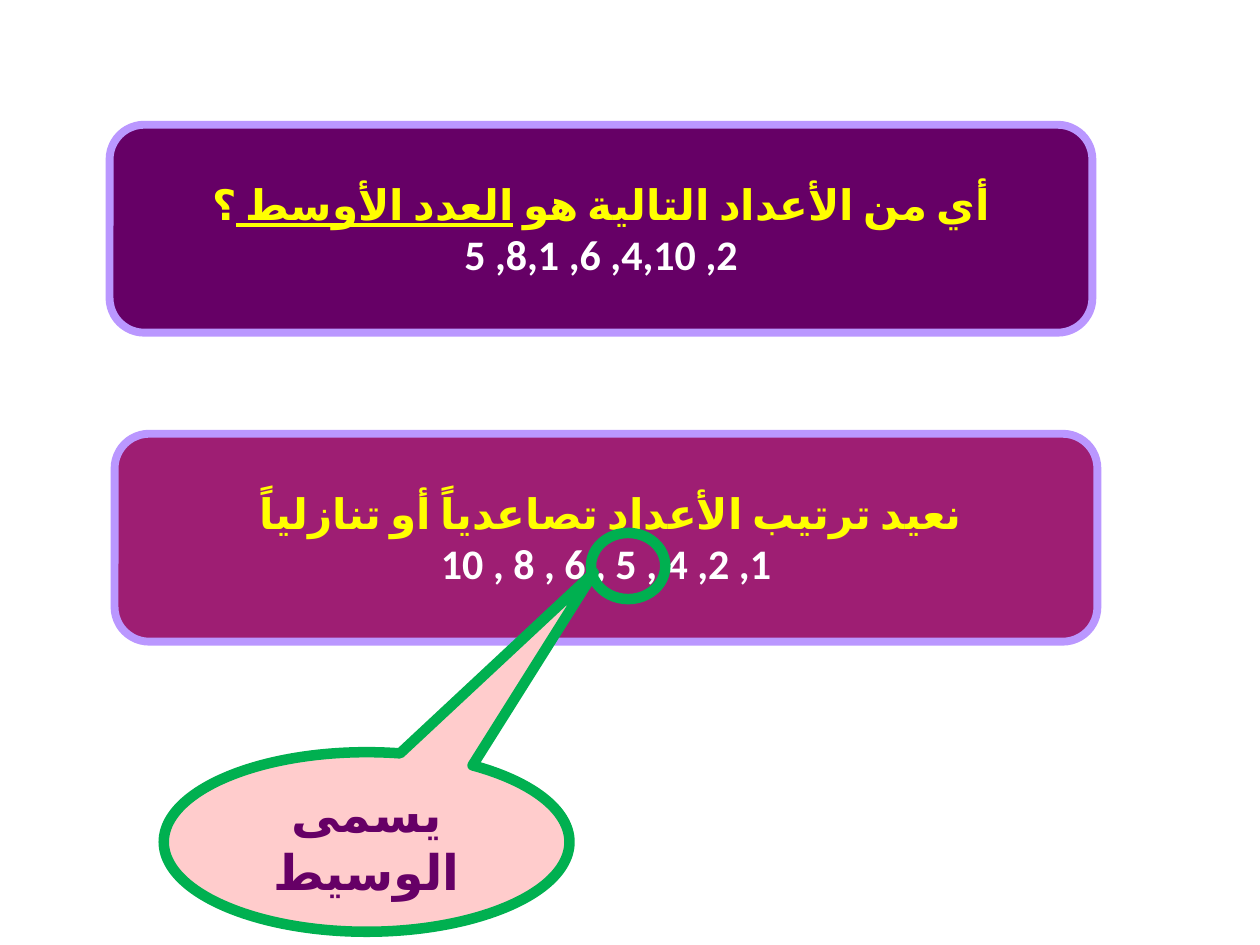
import lxml.etree
import pptx
import pptx.util
import pptx.dml.color
import pptx.enum.lang
import pptx.enum.shapes
import pptx.enum.text
import pptx.oxml.ns

WIDE = pptx.util.Inches(10)
HIGH = pptx.util.Inches(7.5)
KIND = pptx.enum.shapes.MSO_SHAPE
FACE = "Calibri"
HUE = {
    "plum": "660066",
    "berry": "9E1E73",
    "lilac": "BA97FF",
    "green": "00B050",
    "pink": "FFCCCC",
    "yellow": "FFFF00",
    "white": "FFFFFF",
}


def tint(name):
    return pptx.dml.color.RGBColor.from_string(HUE[name])


def draw(slide, kind, box, line, width, fill=None):
    left, top, wide, high = box
    shape = slide.shapes.add_shape(
        kind,
        round(left * WIDE),
        round(top * HIGH),
        round(wide * WIDE),
        round(high * HIGH),
    )
    shape.shadow.inherit = False
    shape.line.color.rgb = tint(line)
    shape.line.width = pptx.util.Pt(width)
    if fill:
        shape.fill.solid()
        shape.fill.fore_color.rgb = tint(fill)
    else:
        shape.fill.background()
    return shape


def script(run):
    run.font.language_id = pptx.enum.lang.MSO_LANGUAGE_ID.ARABIC
    tag = pptx.oxml.ns.qn("a:cs")
    lxml.etree.SubElement(run._r.get_or_add_rPr(), tag).set("typeface", FACE)


def write(para, parts, size, hue):
    para.alignment = pptx.enum.text.PP_ALIGN.CENTER
    para._p.get_or_add_pPr().set("rtl", "1")
    font = para.font
    font.name = FACE
    font.size = pptx.util.Pt(size)
    font.bold = True
    font.color.rgb = tint(hue)
    for text, under in parts:
        run = para.add_run()
        run.text = text
        if under:
            run.font.underline = True
        if any(sign.isalpha() for sign in text):
            script(run)


def card(slide, left, top, fill, head, row):
    box = (left, top, 0.78, 0.22)
    shape = draw(slide, KIND.ROUNDED_RECTANGLE, box, "lilac", 4.5, fill)
    frame = shape.text_frame
    write(frame.paragraphs[0], head, 24, "yellow")
    write(frame.add_paragraph(), [(row, False)], 24, "white")


def ring(slide, box):
    draw(slide, KIND.OVAL, box, "green", 6)


def bubble(slide, box, tip, text):
    shape = draw(slide, KIND.OVAL_CALLOUT, box, "green", 6, "pink")
    for index, value in enumerate(tip):
        shape.adjustments[index] = value
    write(shape.text_frame.paragraphs[0], [(text, False)], 28, "plum")


def main():
    deck = pptx.Presentation()
    deck.slide_width, deck.slide_height = WIDE, HIGH
    slide = deck.slides.add_slide(deck.slide_layouts[6])
    ask = [
        ("أي من الأعداد التالية هو ", False),
        ("العدد الأوسط ", True),
        ("؟", False),
    ]
    sort = [("نعيد ترتيب الأعداد تصاعدياً أو تنازلياً ", False)]
    card(slide, 0.087, 0.132, "plum", ask, "2, 4,10, 6, 8,1, 5")
    card(slide, 0.091, 0.459, "berry", sort, "1, 2, 4 , 5 , 6 , 8 , 10")
    ring(slide, (0.469, 0.564, 0.059, 0.07))
    bubble(slide, (0.13, 0.796, 0.322, 0.19), (0.56, -1.5), "يسمى الوسيط")
    deck.save("out.pptx")


if __name__ == "__main__":
    main()
